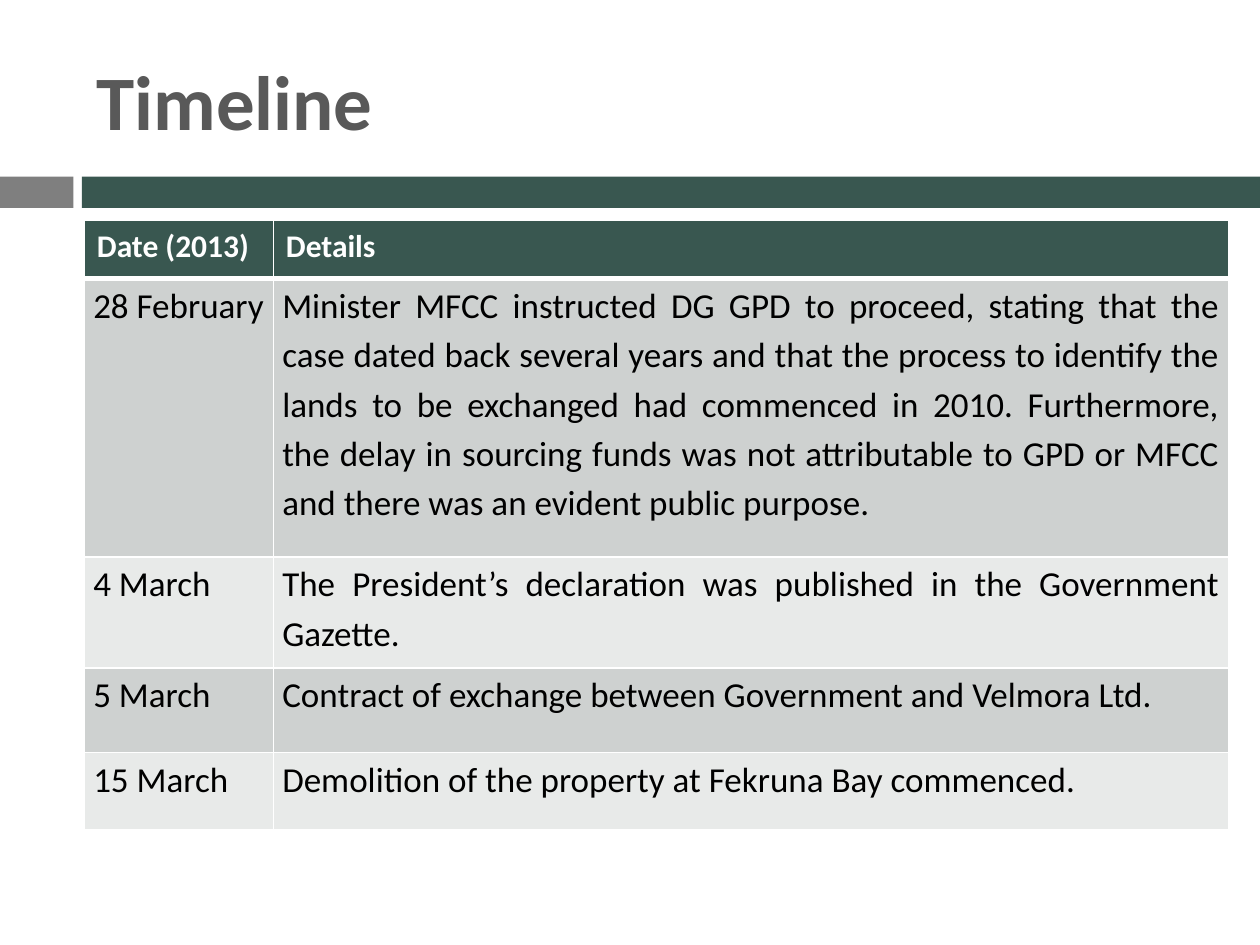
from lxml import etree
from pptx import Presentation
from pptx import util as u
from pptx.dml.color import RGBColor
from pptx.enum import shapes, text
from pptx.oxml import ns

COLORS = {
    "green": "395750", "grey": "7F7F7F", "title": "595959", "white": "FFFFFF",
    "black": "000000", "dark band": "CED1D0", "light band": "E8EAE9",
}
FONT = "Calibri"


def set_font(para, size, color, bold):
    para.font.name = FONT
    para.font.size = u.Pt(size)
    para.font.bold = bold
    para.font.color.rgb = RGBColor.from_string(COLORS[color])


def set_borders(cell, top, bottom):
    """White borders; they come before the fill in the cell properties."""
    props = cell._tc.get_or_add_tcPr()
    widths = {"lnL": 1, "lnR": 1, "lnT": top, "lnB": bottom}
    for index, (side, width) in enumerate(widths.items()):
        line = etree.Element(ns.qn(f"a:{side}"), w=str(u.Pt(width)))
        fill = etree.SubElement(line, ns.qn("a:solidFill"))
        etree.SubElement(fill, ns.qn("a:srgbClr"), val=COLORS["white"])
        props.insert(index, line)


deck = Presentation()
deck.slide_width, deck.slide_height = u.Cm(25.4), u.Cm(19.05)
page = deck.slides.add_slide(deck.slide_layouts[6])

# Band under the title
for left, width, color in [(0, 1.48, "grey"), (1.65, 23.75, "green")]:
    bar = page.shapes.add_shape(shapes.MSO_SHAPE.RECTANGLE,
                                u.Cm(left), u.Cm(3.56), u.Cm(width), u.Cm(0.63))
    bar.shadow.inherit = False
    bar.fill.solid()
    bar.fill.fore_color.rgb = RGBColor.from_string(COLORS[color])
    bar.line.fill.background()

# Title
box = page.shapes.add_textbox(u.Cm(1.7), u.Cm(0.64), u.Cm(22.66), u.Cm(2.74))
box.text_frame.word_wrap = True
box.text_frame.vertical_anchor = text.MSO_ANCHOR.MIDDLE
title = box.text_frame.paragraphs[0]
title.text = "Timeline"
set_font(title, 44, "title", True)

# Timeline table
rows = [
    ("Date (2013)", "Details"),
    ("28 February",
     "Minister MFCC instructed DG GPD to proceed, stating that the case dated back "
     "several years and that the process to identify the lands to be exchanged had "
     "commenced in 2010. Furthermore, the delay in sourcing funds was not attributable "
     "to GPD or MFCC and there was an evident public purpose."),
    ("4 March", "The President’s declaration was published in the Government Gazette."),
    ("5 March", "Contract of exchange between Government and Velmora Ltd."),
    ("15 March", "Demolition of the property at Fekruna Bay commenced."),
]
column_widths = [3.81, 19.25]
row_heights = [1.17, 5.61, 2.24, 1.7, 1.55]
table = page.shapes.add_table(len(rows), len(column_widths), u.Cm(1.7), u.Cm(4.45),
                              u.Cm(sum(column_widths)), u.Cm(sum(row_heights))).table
for column, width in zip(table.columns, column_widths):
    column.width = u.Cm(width)
for row, height in zip(table.rows, row_heights):
    row.height = u.Cm(height)

for r, row in enumerate(rows):
    header = r == 0
    band = "green" if header else "dark band" if r % 2 else "light band"
    for c, wording in enumerate(row):
        cell = table.cell(r, c)
        cell.fill.solid()
        cell.fill.fore_color.rgb = RGBColor.from_string(COLORS[band])
        set_borders(cell, top=3 if r == 1 else 1, bottom=3 if header else 1)
        para = cell.text_frame.paragraphs[0]
        para.text = wording
        if header or c == 1:
            para.alignment = text.PP_ALIGN.JUSTIFY
        if header:
            set_font(para, 18, "white", True)
        else:
            set_font(para, 20, "black", False)
            para.line_spacing = 1.15
            cell.margin_left = cell.margin_right = u.Cm(0.18)
            cell.margin_top = cell.margin_bottom = 0

deck.save("out.pptx")
